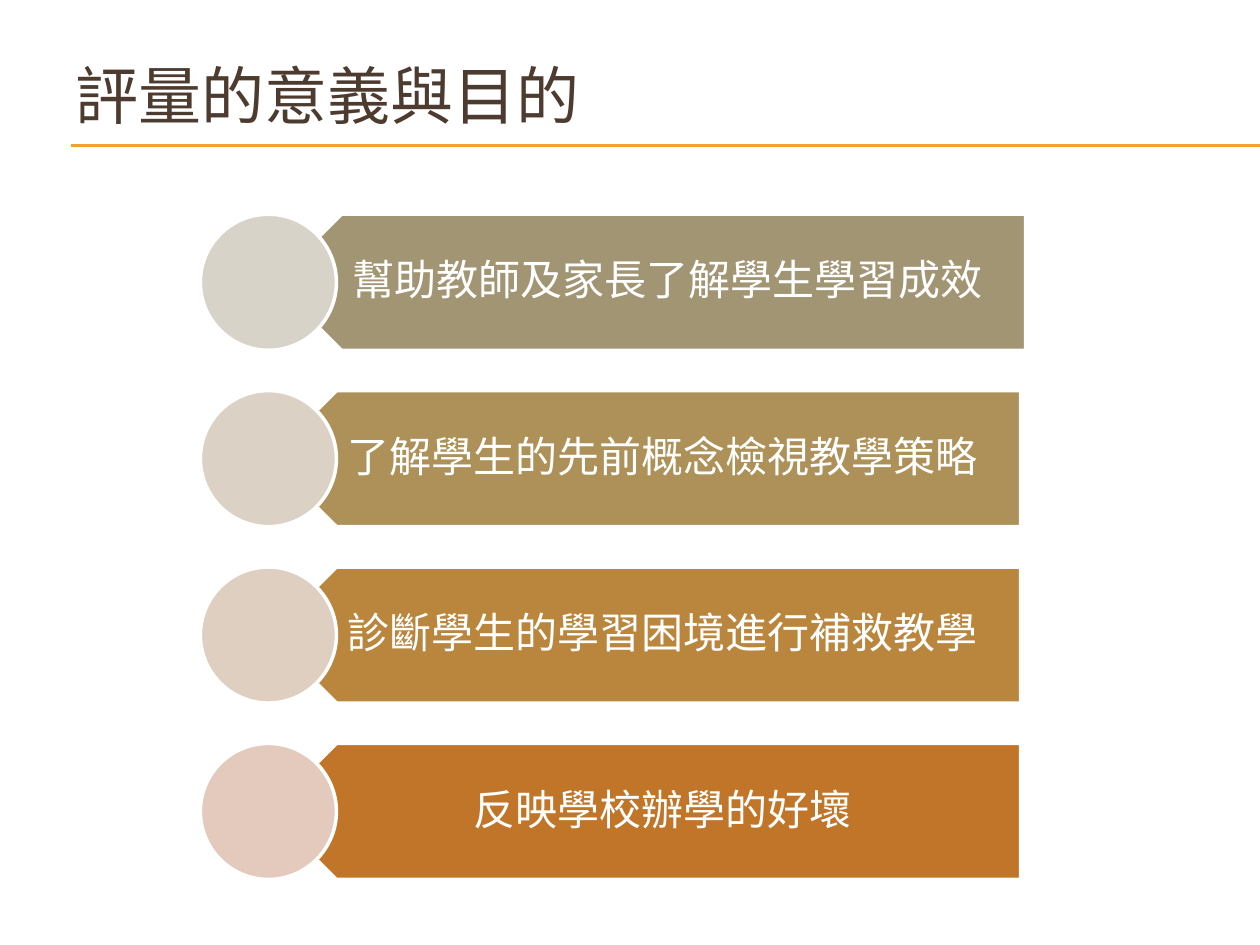
from pptx import Presentation
from pptx.dml.color import RGBColor
from pptx.enum.shapes import MSO_CONNECTOR, MSO_SHAPE
from pptx.enum.text import MSO_ANCHOR, PP_ALIGN
from pptx.oxml.ns import qn
from pptx.util import Inches, Pt
from lxml.etree import SubElement

WHITE = RGBColor(0xFF, 0xFF, 0xFF)
BROWN = RGBColor(0x4E, 0x3B, 0x30)
AMBER = RGBColor(0xF0, 0xA2, 0x2E)
CJK_FONT = "Noto Sans CJK SC"

SLIDE_W, SLIDE_H = 10, 7.5
ROW_TOP, ROW_PITCH, ROW_H = 1.7, 1.4, 1.08
CIRCLE_LEFT, BANNER_LEFT, BANNER_W = 1.59, 2.13, 5.97
FIRST_BANNER_SHIFT = 0.04

# purpose, banner colour, circle colour
PURPOSES = [
    ("幫助教師及家長了解學生學習成效", RGBColor(0xA1, 0x95, 0x74), RGBColor(0xD7, 0xD3, 0xC9)),
    ("了解學生的先前概念檢視教學策略", RGBColor(0xAE, 0x91, 0x59), RGBColor(0xDB, 0xD2, 0xC5)),
    ("診斷學生的學習困境進行補救教學", RGBColor(0xBA, 0x86, 0x3E), RGBColor(0xDF, 0xCF, 0xC1)),
    ("反映學校辦學的好壞", RGBColor(0xC1, 0x75, 0x29), RGBColor(0xE3, 0xCA, 0xBD)),
]


def inches(*lengths):
    return [Inches(length) for length in lengths]


def write(paragraph, words, size, color, font):
    run = paragraph.add_run()
    run.text = words
    run.font.size = Pt(size)
    run.font.name = font
    run.font.color.rgb = color
    east_asian = SubElement(run.font._element, qn("a:ea"))
    east_asian.set("typeface", CJK_FONT)


def add_title(slide, words):
    title = slide.shapes.title
    title.left, title.top, title.width, title.height = inches(0.5, 0.29, 9.5, 0.92)
    title.text_frame.vertical_anchor = MSO_ANCHOR.MIDDLE
    heading = title.text_frame.paragraphs[0]
    heading.alignment = PP_ALIGN.LEFT
    write(heading, words, 36, BROWN, "Roboto")


def add_rule(slide, y):
    rule = slide.shapes.add_connector(
        MSO_CONNECTOR.STRAIGHT, *inches(0.56, y, SLIDE_W, y))
    rule.line.color.rgb = AMBER
    rule.line.width = Pt(0.75)
    SubElement(rule._element.spPr, qn("a:effectLst"))


def add_outlined(slide, preset, box, color):
    outlined = slide.shapes.add_shape(preset, *inches(*box))
    outlined.shadow.inherit = False
    outlined.fill.solid()
    outlined.fill.fore_color.rgb = color
    outlined.line.color.rgb = WHITE
    outlined.line.width = Pt(2)
    return outlined


def add_label(slide, box, words):
    frame = slide.shapes.add_textbox(*inches(*box)).text_frame
    frame.word_wrap = True
    frame.vertical_anchor = MSO_ANCHOR.MIDDLE
    frame.margin_left, frame.margin_right = inches(0.47, 0.19)
    frame.margin_top = frame.margin_bottom = Inches(0.1)
    label = frame.paragraphs[0]
    label.alignment = PP_ALIGN.CENTER
    label.line_spacing = 0.9
    write(label, words, 24, WHITE, CJK_FONT)


def add_purpose(slide, row, words, banner_color, circle_color):
    """Add one banner pointing left, with its text and the circle over its tip."""
    top = ROW_TOP + row * ROW_PITCH
    left = BANNER_LEFT + (FIRST_BANNER_SHIFT if row == 0 else 0)
    banner_box = (left, top, BANNER_W, ROW_H)
    banner = add_outlined(slide, MSO_SHAPE.PENTAGON, banner_box, banner_color)
    banner.rotation = 180
    add_label(slide, banner_box, words)
    add_outlined(slide, MSO_SHAPE.OVAL, (CIRCLE_LEFT, top, ROW_H, ROW_H), circle_color)


def main():
    deck = Presentation()
    deck.slide_width, deck.slide_height = inches(SLIDE_W, SLIDE_H)
    slide = deck.slides.add_slide(deck.slide_layouts[5])
    for y in (1.15, 1.16):
        add_rule(slide, y)
    for row, purpose in enumerate(PURPOSES):
        add_purpose(slide, row, *purpose)
    add_title(slide, "評量的意義與目的")
    deck.save("out.pptx")


if __name__ == "__main__":
    main()
